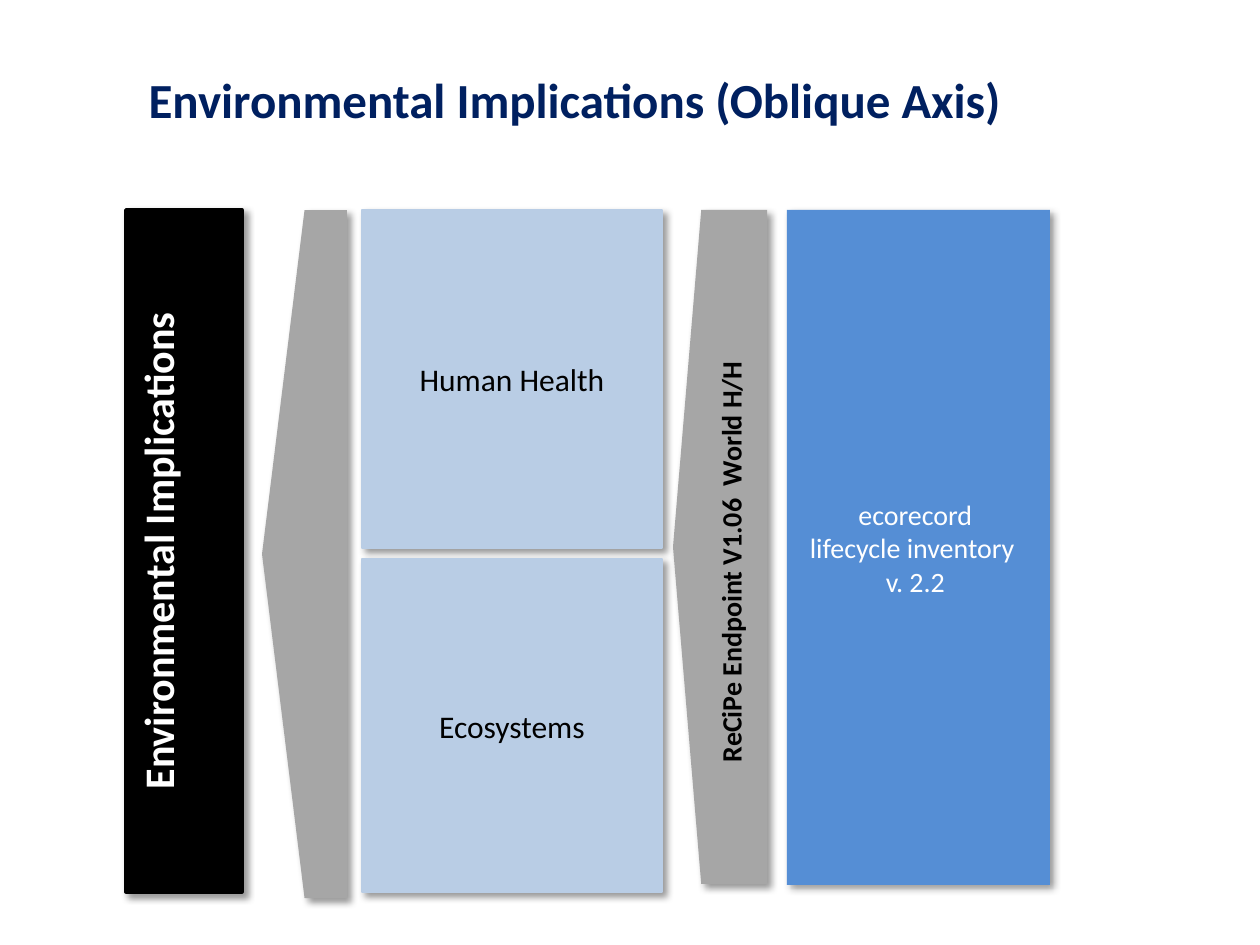
from lxml import etree
from pptx import Presentation
from pptx import util as u
from pptx.dml import color
from pptx.enum import shapes, text
from pptx.oxml import ns

PX = 914400 / 126
FONT = "Calibri"
TOP = 210
BLACK, WHITE, NAVY = "000000", "FFFFFF", "002060"
GREY, PALE_BLUE, BLUE = "A6A6A6", "B9CDE5", "558ED5"


def px(length):
    return u.Emu(round(length * PX))


def rgb(value):
    return color.RGBColor.from_string(value)


def place(shape, left, top, width, height):
    shape.left, shape.top = px(left), px(top)
    shape.width, shape.height = px(width), px(height)


def write(shape, lines, size, colour, bold=False,
          align=text.PP_ALIGN.CENTER, anchor=text.MSO_ANCHOR.MIDDLE):
    frame = shape.text_frame
    frame.word_wrap = True
    frame.auto_size = text.MSO_AUTO_SIZE.NONE
    frame.vertical_anchor = anchor
    for index, line in enumerate(lines):
        paragraph = frame.add_paragraph() if index else frame.paragraphs[0]
        paragraph.alignment = align
        run = paragraph.add_run()
        run.text = line
        run.font.name = FONT
        run.font.size = u.Pt(size)
        run.font.bold = bold
        run.font.color.rgb = rgb(colour)


def add_shadow(shape):
    shape.shadow.inherit = False
    effects = shape._element.spPr.find(ns.qn("a:effectLst"))
    shadow = etree.SubElement(
        effects, ns.qn("a:outerShdw"), blurRad=str(u.Pt(4)),
        dist=str(u.Pt(3)), dir="2700000", algn="tl", rotWithShape="0")
    tint = etree.SubElement(shadow, ns.qn("a:srgbClr"), val=BLACK)
    etree.SubElement(tint, ns.qn("a:alpha"), val="40000")


def add_block(slide, kind, box, fill, line_width=0):
    shape = slide.shapes.add_shape(kind, *map(px, box))
    shape.fill.solid()
    shape.fill.fore_color.rgb = rgb(fill)
    if line_width:
        shape.line.color.rgb = rgb(fill)
        shape.line.width = u.Pt(line_width)
    else:
        shape.line.fill.background()
    add_shadow(shape)
    return shape


def add_box(slide, box, fill, lines, size, colour, line_width=0):
    shape = add_block(slide, shapes.MSO_SHAPE.RECTANGLE, box, fill, line_width)
    write(shape, lines, size, colour)


def add_left_arrow(slide, box, point):
    arrow = add_block(slide, shapes.MSO_SHAPE.PENTAGON, box, GREY)
    arrow.rotation = 180
    arrow.adjustments[0] = point


def add_axis_bar(slide, box, label):
    bar = add_block(slide, shapes.MSO_SHAPE.RECTANGLE, box, BLACK, 2)
    write(bar, [label], 24, WHITE, True, anchor=text.MSO_ANCHOR.TOP)
    bar.text_frame._txBody.bodyPr.set("vert", "vert270")


def add_upright_label(slide, box, label):
    shape = slide.shapes.add_textbox(*map(px, box))
    shape.rotation = 270
    write(shape, [label], 16, BLACK, True, text.PP_ALIGN.LEFT,
          text.MSO_ANCHOR.TOP)


def add_title(slide, box, title):
    shape = slide.shapes.title
    place(shape, *box)
    write(shape, [title], 28, NAVY, True, text.PP_ALIGN.LEFT,
          text.MSO_ANCHOR.TOP)


def main():
    presentation = Presentation()
    presentation.slide_width = px(1260)
    presentation.slide_height = px(945)
    slide = presentation.slides.add_slide(presentation.slide_layouts[5])

    add_title(slide, (136, 63, 882, 72),
              "Environmental Implications (Oblique Axis)")
    add_axis_bar(slide, (126, TOP, 116, 682), "Environmental Implications")
    add_left_arrow(slide, (262, TOP, 85, 688), 0.5)
    for label, top, height in (("Human Health", TOP, 338),
                               ("Ecosystems", 559, 333)):
        add_box(slide, (362, top, 300, height), PALE_BLUE, [label], 18,
                BLACK, 0.75)
    add_box(slide, (787, TOP, 263, 675), BLUE,
            ["ecorecord ", "lifecycle inventory  ", "v. 2.2 "], 16, WHITE)
    add_left_arrow(slide, (673, TOP, 94, 674), 0.3)
    add_upright_label(slide, (504, 524, 454, 47),
                      "ReCiPe Endpoint V1.06  World H/H")

    presentation.save("out.pptx")


if __name__ == "__main__":
    main()
